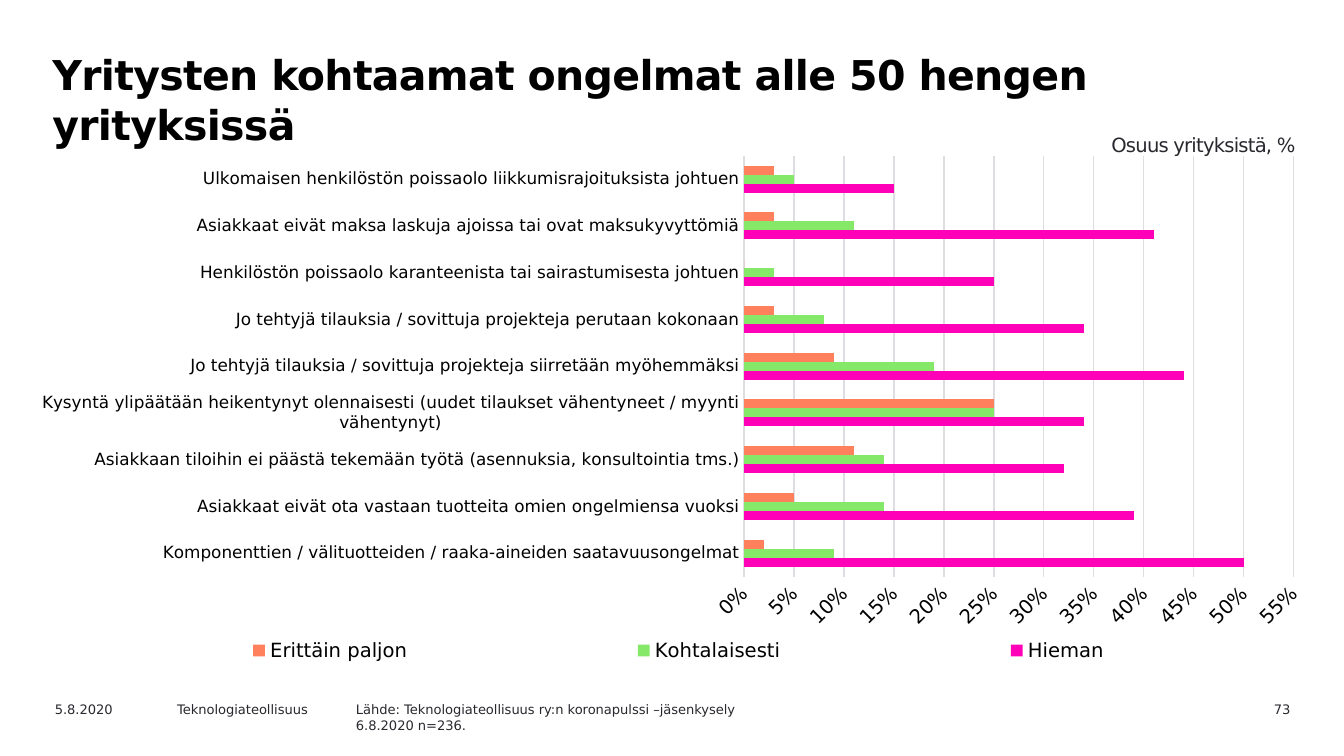
"""Builds a slide with a clustered bar chart of problems met by small companies."""
from lxml.etree import SubElement
from pptx import Presentation
from pptx.chart.data import CategoryChartData
from pptx.dml.color import RGBColor
from pptx.enum.chart import XL_CHART_TYPE, XL_LEGEND_POSITION, XL_TICK_MARK
from pptx.enum.text import PP_ALIGN
from pptx.oxml import parse_xml
from pptx.oxml.ns import nsdecls, qn
from pptx.util import Inches, Pt

FONT = "DejaVu Sans"
COLORS = {
    "title": "000000",
    "text": "29282E",
    "grid": "DEDDE1",
    "Hieman": "FF00B8",
    "Kohtalaisesti": "85E869",
    "Erittäin paljon": "FF805C",
}


def style_font(font, size, color, bold=False):
    font.name = FONT
    font.size = Pt(size)
    font.bold = bold
    font.color.rgb = RGBColor.from_string(COLORS[color])


def add_text(slide, lines, box, size, color="text", bold=False, spacing=0):
    shape = slide.shapes.add_textbox(*[Inches(length) for length in box])
    text_frame = shape.text_frame
    text_frame.word_wrap = True
    text_frame.text = "\n".join(lines)
    for paragraph in text_frame.paragraphs:
        for run in paragraph.runs:
            style_font(run.font, size, color, bold)
            if spacing:
                run.font._element.set("spc", str(spacing))
    return text_frame


presentation = Presentation()
presentation.slide_width = Inches(10)
presentation.slide_height = Inches(10) * 9 // 16
slide = presentation.slides.add_slide(presentation.slide_layouts[6])

title = add_text(
    slide,
    ["Yritysten kohtaamat ongelmat alle 50 hengen yrityksissä"],
    (0.28, 0.31, 8.74, 0.71), 22, "title", True, -35,
)
title.margin_left = Inches(0.11)
title.margin_top = Inches(0.05)
title.paragraphs[0].line_spacing = Pt(27)

categories = [
    "Komponenttien / välituotteiden / raaka-aineiden saatavuusongelmat",
    "Asiakkaat eivät ota vastaan tuotteita omien ongelmiensa vuoksi",
    "Asiakkaan tiloihin ei päästä tekemään työtä (asennuksia, konsultointia tms.)",
    "Kysyntä ylipäätään heikentynyt olennaisesti (uudet tilaukset vähentyneet / myynti vähentynyt)",
    "Jo tehtyjä tilauksia / sovittuja projekteja siirretään myöhemmäksi",
    "Jo tehtyjä tilauksia / sovittuja projekteja perutaan kokonaan",
    "Henkilöstön poissaolo karanteenista tai sairastumisesta johtuen",
    "Asiakkaat eivät maksa laskuja ajoissa tai ovat maksukyvyttömiä",
    "Ulkomaisen henkilöstön poissaolo liikkumisrajoituksista johtuen",
]
answers = {
    "Hieman": [0.5, 0.39, 0.32, 0.34, 0.44, 0.34, 0.25, 0.41, 0.15],
    "Kohtalaisesti": [0.09, 0.14, 0.14, 0.25, 0.19, 0.08, 0.03, 0.11, 0.05],
    "Erittäin paljon": [0.02, 0.05, 0.11, 0.25, 0.09, 0.03, 0, 0.03, 0.03],
}
chart_data = CategoryChartData(number_format="0%")
chart_data.categories = categories
for name, values in answers.items():
    chart_data.add_series(name, values)
chart = slide.shapes.add_chart(
    XL_CHART_TYPE.BAR_CLUSTERED,
    Inches(0.12), Inches(1.08), Inches(9.76), Inches(4), chart_data,
).chart
chart.has_title = False
style_font(chart.font, 10, "text")

plot = chart.plots[0]
plot.gap_width = 219
plot.overlap = 0
plot.vary_by_categories = False
for series in plot.series:
    series.format.fill.solid()
    series.format.fill.fore_color.rgb = RGBColor.from_string(COLORS[series.name])

category_axis, value_axis = chart.category_axis, chart.value_axis
for axis, size in ((category_axis, 9), (value_axis, 10.5)):
    axis.major_tick_mark = XL_TICK_MARK.NONE
    axis.minor_tick_mark = XL_TICK_MARK.NONE
    style_font(axis.tick_labels.font, size, "title")
category_axis.has_major_gridlines = False
value_axis.has_major_gridlines = True
for line in (category_axis.format.line, value_axis.major_gridlines.format.line):
    line.color.rgb = RGBColor.from_string(COLORS["grid"])
    line.width = Pt(0.75)
value_axis.format.line.fill.background()
value_axis.minimum_scale = 0
value_axis.maximum_scale = 0.55
value_axis.major_unit = 0.05
value_axis.tick_labels.number_format = "0%"
value_axis.tick_labels.number_format_is_linked = False
label_body = value_axis._element.find(qn("c:txPr")).find(qn("a:bodyPr"))
label_body.set("rot", "-2700000")
label_body.set("vert", "horz")

chart.has_legend = True
legend = chart.legend
legend.position = XL_LEGEND_POSITION.BOTTOM
legend.include_in_layout = False
style_font(legend.font, 10.5, "title")

plot_area = chart._chartSpace.chart.plotArea
for parent, inner, position in (
    (plot_area, True, (0.555, 0.02, 0.419, 0.783)),
    (legend._element, False, (0.01, 0.9, 0.99, 0.08)),
):
    for old_layout in parent.findall(qn("c:layout")):
        parent.remove(old_layout)
    layout = parse_xml(f"<c:layout {nsdecls('c')}/>")
    manual = SubElement(layout, qn("c:manualLayout"))
    if inner:
        SubElement(manual, qn("c:layoutTarget")).set("val", "inner")
    for side in ("xMode", "yMode"):
        SubElement(manual, qn(f"c:{side}")).set("val", "edge")
    for side, value in zip("xywh", position):
        SubElement(manual, qn(f"c:{side}")).set("val", str(value))
    parent.insert(0 if inner else 1, layout)

footers = [
    (["5.8.2020"], 0.31, 1, 0.18),
    (["Teknologiateollisuus"], 1.22, 1.42, 0.18),
    (["Lähde: Teknologiateollisuus ry:n koronapulssi –jäsenkysely", "6.8.2020 n=236."], 2.55, 5.75, 0.45),
]
for lines, left, width, height in footers:
    add_text(slide, lines, (left, 5.17, width, height), 7)
page_number = add_text(slide, ["73"], (8.76, 5.17, 0.94, 0.18), 7)
page_number.paragraphs[0].alignment = PP_ALIGN.RIGHT

unit_label = add_text(slide, ["Osuus yrityksistä, %"], (8.23, 0.95, 1.57, 0.26), 10.5, spacing=-40)
for side in ("left", "top", "right", "bottom"):
    setattr(unit_label, f"margin_{side}", Inches(0.04))

presentation.save("out.pptx")
